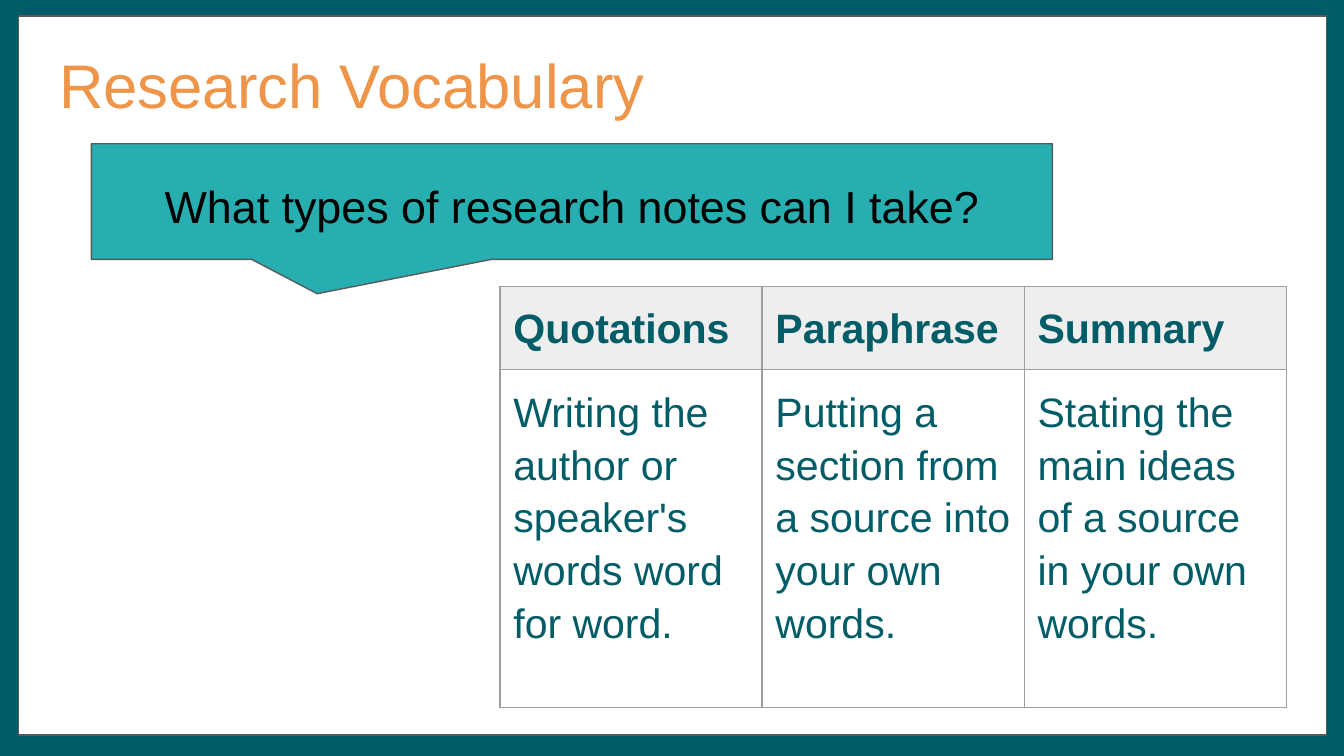
from lxml.etree import SubElement as Sub
from pptx import Presentation
from pptx.dml.color import RGBColor
from pptx.enum.shapes import MSO_SHAPE as Shape
from pptx.enum.text import MSO_ANCHOR as Anchor, MSO_AUTO_SIZE as Fit, PP_ALIGN as Align
from pptx.oxml.ns import qn
from pptx.util import Inches, Pt

TEAL, AQUA, ORANGE = "005C66", "27AEB0", "EF954A"
GRAY, EDGE, PALE = "595959", "9E9E9E", "EEEEEE"
PAD = Inches(0.1)
NOTES = [
    ("Quotations", "Writing the author or speaker's words word for word."),
    ("Paraphrase", "Putting a section from a source into your own words."),
    ("Summary", "Stating the main ideas of a source in your own words."),
]


def color(code):
    return RGBColor.from_string(code)


def paint(fill, code):
    fill.solid()
    fill.fore_color.rgb = color(code)


def write(frame, text, size=22, code=TEAL, bold=False, align=Align.LEFT):
    frame.text = text
    line = frame.paragraphs[0]
    line.alignment = align
    line.line_spacing = 1.15
    font = line.runs[0].font
    font.name, font.size, font.bold = "Arial", Pt(size), bold
    font.color.rgb = color(code)


def pad(box):
    box.margin_left = box.margin_right = PAD
    box.margin_top = box.margin_bottom = PAD


def add_box(slide, kind, area, code):
    box = slide.shapes.add_shape(kind, *map(Inches, area))
    box.shadow.inherit = False
    paint(box.fill, code)
    box.line.color.rgb = color(GRAY)
    box.line.width = Pt(0.75)
    return box


def add_title(slide, text):
    title = slide.shapes.title
    title.left, title.top = Inches(0.34), Inches(0.17)
    title.width, title.height = Inches(9.32), Inches(0.76)
    frame = title.text_frame
    pad(frame)
    frame.word_wrap = True
    frame.auto_size = Fit.SHAPE_TO_FIT_TEXT
    frame.vertical_anchor = Anchor.TOP
    write(frame, text, size=33, code=ORANGE)


def add_call(slide, text):
    call = add_box(slide, Shape.ROUNDED_RECTANGULAR_CALLOUT, (0.68, 1.07, 7.15, 0.86), AQUA)
    # Pointer tip, then square corners
    for i, value in enumerate((-0.265, 0.798, 0)):
        call.adjustments[i] = value
    frame = call.text_frame
    pad(frame)
    frame.word_wrap = True
    frame.vertical_anchor = Anchor.MIDDLE
    write(frame, text, size=24, code="000000", align=Align.CENTER)


def frame_cell(cell):
    props = cell._tc.get_or_add_tcPr()
    for i, side in enumerate(("a:lnL", "a:lnR", "a:lnT", "a:lnB")):
        line = props.makeelement(qn(side), {"w": str(Pt(0.75))})
        Sub(Sub(line, qn("a:solidFill")), qn("a:srgbClr"), val=EDGE)
        props.insert(i, line)  # Borders precede the fill


def add_table(slide, notes):
    wide, rows = 1.95, (0.56, 2.51)
    area = (3.72, 2.13, wide * len(notes), sum(rows))
    table = slide.shapes.add_table(len(rows), len(notes), *map(Inches, area)).table
    table.first_row = table.horz_banding = False
    for row, high in zip(table.rows, rows):
        row.height = Inches(high)
    for x, note in enumerate(notes):
        table.columns[x].width = Inches(wide)
        for y, text in enumerate(note):
            cell, head = table.cell(y, x), y == 0
            pad(cell)
            write(cell.text_frame, text, bold=head)
            if head:
                paint(cell.fill, PALE)
            else:
                cell.fill.background()
            frame_cell(cell)


def main():
    deck = Presentation()
    # Widescreen, 16:9
    deck.slide_width = Inches(10)
    deck.slide_height = deck.slide_width * 9 // 16
    slide = deck.slides.add_slide(deck.slide_layouts[5])
    # Teal border around a white panel, placed behind the title
    paint(slide.background.fill, TEAL)
    panel = add_box(slide, Shape.RECTANGLE, (0.14, 0.12, 9.73, 5.35), "FFFFFF")
    slide.shapes.title._element.addprevious(panel._element)
    # Content
    add_title(slide, "Research Vocabulary")
    add_call(slide, "What types of research notes can I take?")
    add_table(slide, NOTES)
    deck.save("out.pptx")


if __name__ == "__main__":
    main()
